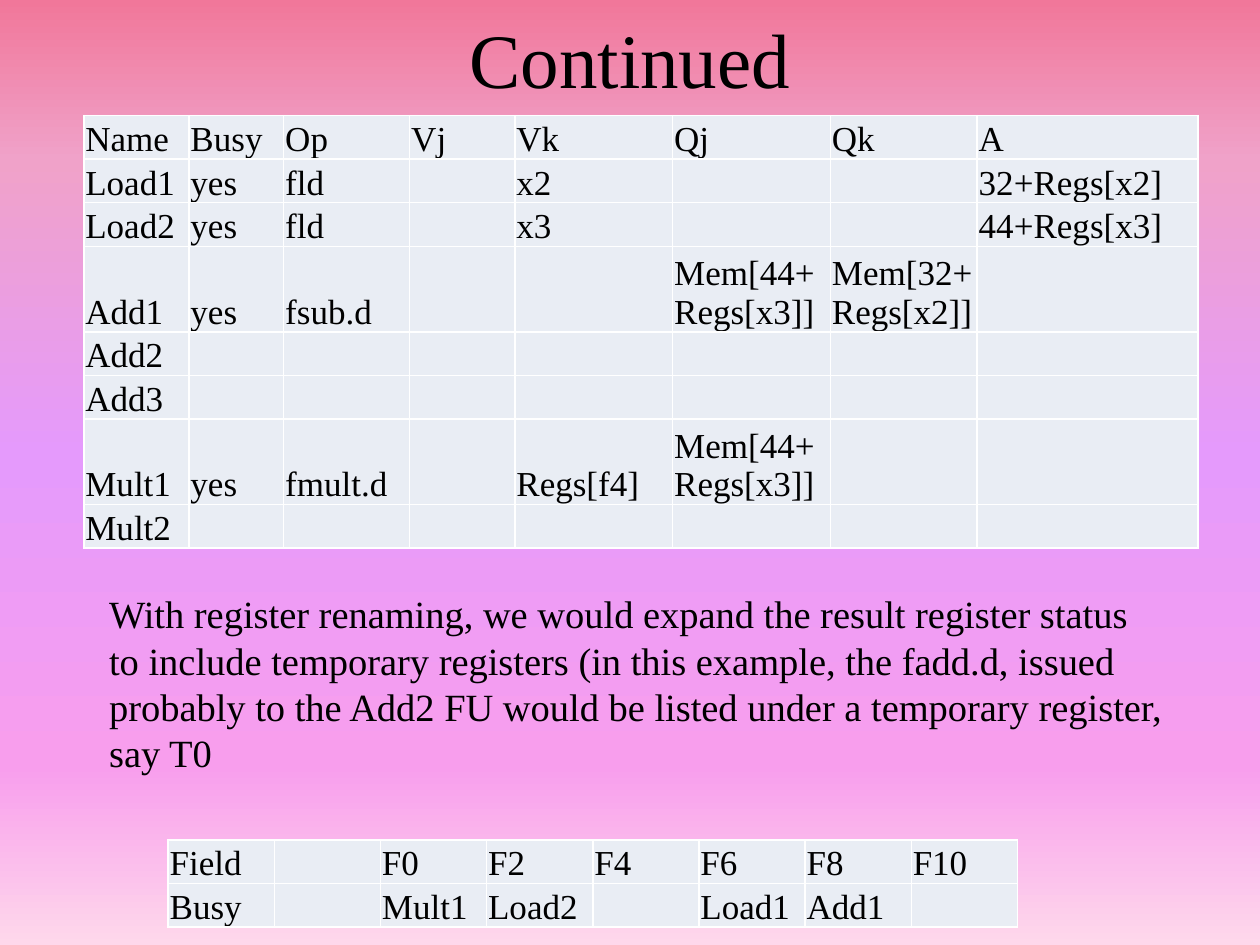
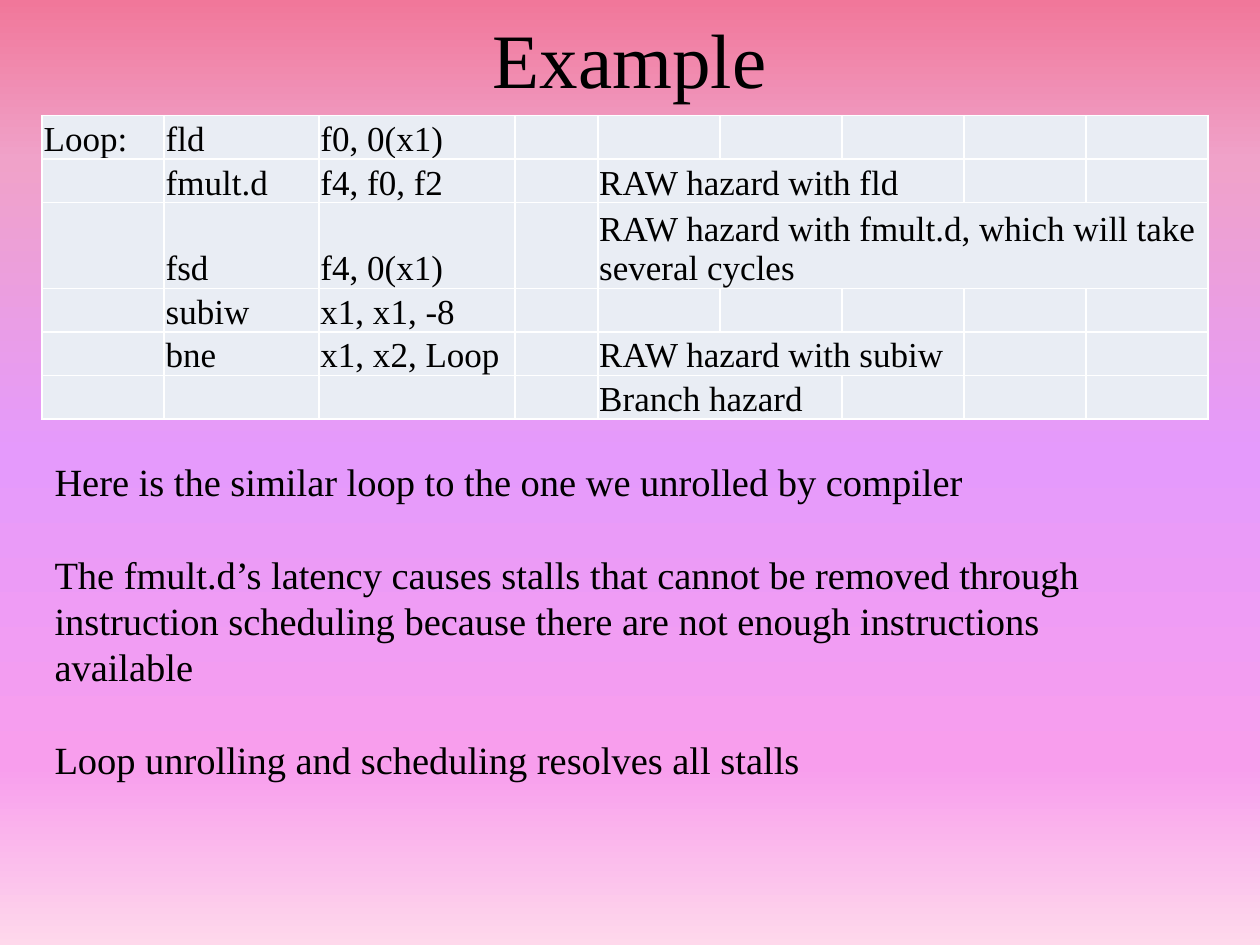
from dataclasses import dataclass, field

from lxml import etree
from pptx import Presentation
from pptx import util as u
from pptx.dml import color
from pptx.enum import text
from pptx.oxml import ns

FONT = "Times New Roman"
INK, CELL, RULE = "000000", "E9EDF4", "FFFFFF"
GRADIENT = {0: "F1779A", 17: "F0A2C9", 48: "E59AFC", 81: "F89EED", 100: "FED8EB"}
TITLE_SIZE, BODY_SIZE, CELL_SIZE = 44, 22, 20
LINE_PITCH = 26.5
ROW = 0.8
CELL_INSET = 0.03


@dataclass
class Grid:
    left: float
    top: float
    widths: list[float]
    rows: list[str]
    tall: tuple[int, ...] = ()
    spans: dict[tuple[int, int], int] = field(default_factory=dict)


@dataclass
class Note:
    left: float
    top: float
    width: float
    height: float
    blocks: list[list[str]]


@dataclass
class Page:
    title: str
    grids: list[Grid]
    note: Note


PAGES = [
    Page(
        "Continued",
        [
            Grid(
                1.69, 2.33, [2.12, 1.91, 2.54, 2.12, 3.18, 3.18, 2.96, 4.45],
                [
                    "Name|Busy|Op|Vj|Vk|Qj|Qk|A",
                    "Load1|yes|fld||x2|||32+Regs[x2]",
                    "Load2|yes|fld||x3|||44+Regs[x3]",
                    "Add1|yes|fsub.d|||Mem[44+Regs[x3]]|Mem[32+Regs[x2]]|",
                    "Add2|||||||",
                    "Add3|||||||",
                    "Mult1|yes|fmult.d||Regs[f4]|Mem[44+Regs[x3]]||",
                    "Mult2|||||||",
                ],
                tall=(3, 6),
            ),
            Grid(
                3.39, 16.93, [2.14] * 8,
                ["Field||F0|F2|F4|F6|F8|F10", "Busy||Mult1|Load2||Load1|Add1|"],
            ),
        ],
        Note(1.95, 11.77, 22.18, 4.01, [[
            "With register renaming, we would expand the result register status",
            "to include temporary registers (in this example, the fadd.d, issued",
            "probably to the Add2 FU would be listed under a temporary register,",
            "say T0",
        ]]),
    ),
    Page(
        "Example",
        [
            Grid(
                0.85, 2.33, [2.46, 3.12, 3.95, 1.67] + [2.46] * 5,
                [
                    "Loop:|fld|f0, 0(x1)||||||",
                    "|fmult.d|f4, f0, f2||RAW hazard with fld||||",
                    "|fsd|f4, 0(x1)||RAW hazard with fmult.d, which will take several cycles||||",
                    "|subiw|x1, x1, -8||||||",
                    "|bne|x1, x2, Loop||RAW hazard with subiw||||",
                    "||||Branch hazard||||",
                ],
                tall=(2,),
                spans={(1, 4): 3, (2, 4): 5, (4, 4): 3, (5, 4): 2},
            ),
        ],
        Note(0.85, 9.1, 23.92, 6.84, [
            ["Here is the similar loop to the one we unrolled by compiler"],
            [
                "The fmult.d’s latency causes stalls that cannot be removed through",
                "instruction scheduling because there are not enough instructions",
                "available",
            ],
            ["Loop unrolling and scheduling resolves all stalls"],
        ]),
    ),
]


def rgb(value: str) -> color.RGBColor:
    return color.RGBColor.from_string(value)


def add_child(parent, tag: str, **attrs: str):
    return etree.SubElement(parent, ns.qn(tag), attrs)


def style_runs(p, size: float) -> None:
    for r in p.runs:
        r.font.name = FONT
        r.font.size = u.Pt(size)
        r.font.color.rgb = rgb(INK)


def set_background(master) -> None:
    fill = master.background.fill
    fill.gradient()
    fill.gradient_angle = 270
    stops = master.element.find(".//" + ns.qn("a:gsLst"))
    for stop in list(stops):
        stops.remove(stop)
    for percent, value in GRADIENT.items():
        stop = add_child(stops, "a:gs", pos=str(percent * 1000))
        add_child(stop, "a:srgbClr", val=value)


def add_title(slide, title: str) -> None:
    sp = slide.shapes.add_textbox(u.Cm(1.27), u.Cm(-0.43), u.Cm(22.86), u.Cm(3.18))
    tf = sp.text_frame
    tf.word_wrap = True
    tf.vertical_anchor = text.MSO_ANCHOR.MIDDLE
    tf.text = title
    p = tf.paragraphs[0]
    p.alignment = text.PP_ALIGN.CENTER
    style_runs(p, TITLE_SIZE)


def add_note(slide, note: Note) -> None:
    sp = slide.shapes.add_textbox(
        u.Cm(note.left), u.Cm(note.top), u.Cm(note.width), u.Cm(note.height)
    )
    tf = sp.text_frame
    tf.word_wrap = True
    tf.text = "\n".join(line for block in note.blocks for line in block)
    paragraphs = iter(tf.paragraphs)
    for i, block in enumerate(note.blocks):
        for j in range(len(block)):
            p = next(paragraphs)
            p.line_spacing = u.Pt(LINE_PITCH)
            if i and not j:
                p.space_before = u.Pt(LINE_PITCH)
            style_runs(p, BODY_SIZE)


def format_cell(cell, words: str) -> None:
    cell.margin_left = cell.margin_right = cell.margin_top = u.Cm(CELL_INSET)
    cell.margin_bottom = 0
    cell.vertical_anchor = text.MSO_ANCHOR.BOTTOM
    props = cell._tc.get_or_add_tcPr()
    for side in ("L", "R", "T", "B"):
        ln = add_child(props, f"a:ln{side}", w=str(u.Pt(1)))
        add_child(add_child(ln, "a:solidFill"), "a:srgbClr", val=RULE)
    cell.fill.solid()
    cell.fill.fore_color.rgb = rgb(CELL)
    if words:
        cell.text_frame.text = words
        style_runs(cell.text_frame.paragraphs[0], CELL_SIZE)


def add_grid(slide, grid: Grid) -> None:
    heights = [ROW * (2 if i in grid.tall else 1) for i in range(len(grid.rows))]
    table = slide.shapes.add_table(
        len(heights), len(grid.widths), u.Cm(grid.left), u.Cm(grid.top),
        u.Cm(sum(grid.widths)), u.Cm(sum(heights)),
    ).table
    table.first_row = table.horz_banding = False
    for column, width in zip(table.columns, grid.widths):
        column.width = u.Cm(width)
    for i, (row, height) in enumerate(zip(grid.rows, heights)):
        table.rows[i].height = u.Cm(height)
        for j, words in enumerate(row.split("|")):
            format_cell(table.cell(i, j), words)
    for (i, j), count in grid.spans.items():
        table.cell(i, j).merge(table.cell(i, j + count - 1))


def main() -> None:
    prs = Presentation()
    prs.slide_width, prs.slide_height = u.Cm(25.4), u.Cm(19.05)
    set_background(prs.slide_master)
    for page in PAGES:
        slide = prs.slides.add_slide(prs.slide_layouts[6])
        add_title(slide, page.title)
        for grid in page.grids:
            add_grid(slide, grid)
        add_note(slide, page.note)
    prs.save("out.pptx")


if __name__ == "__main__":
    main()
